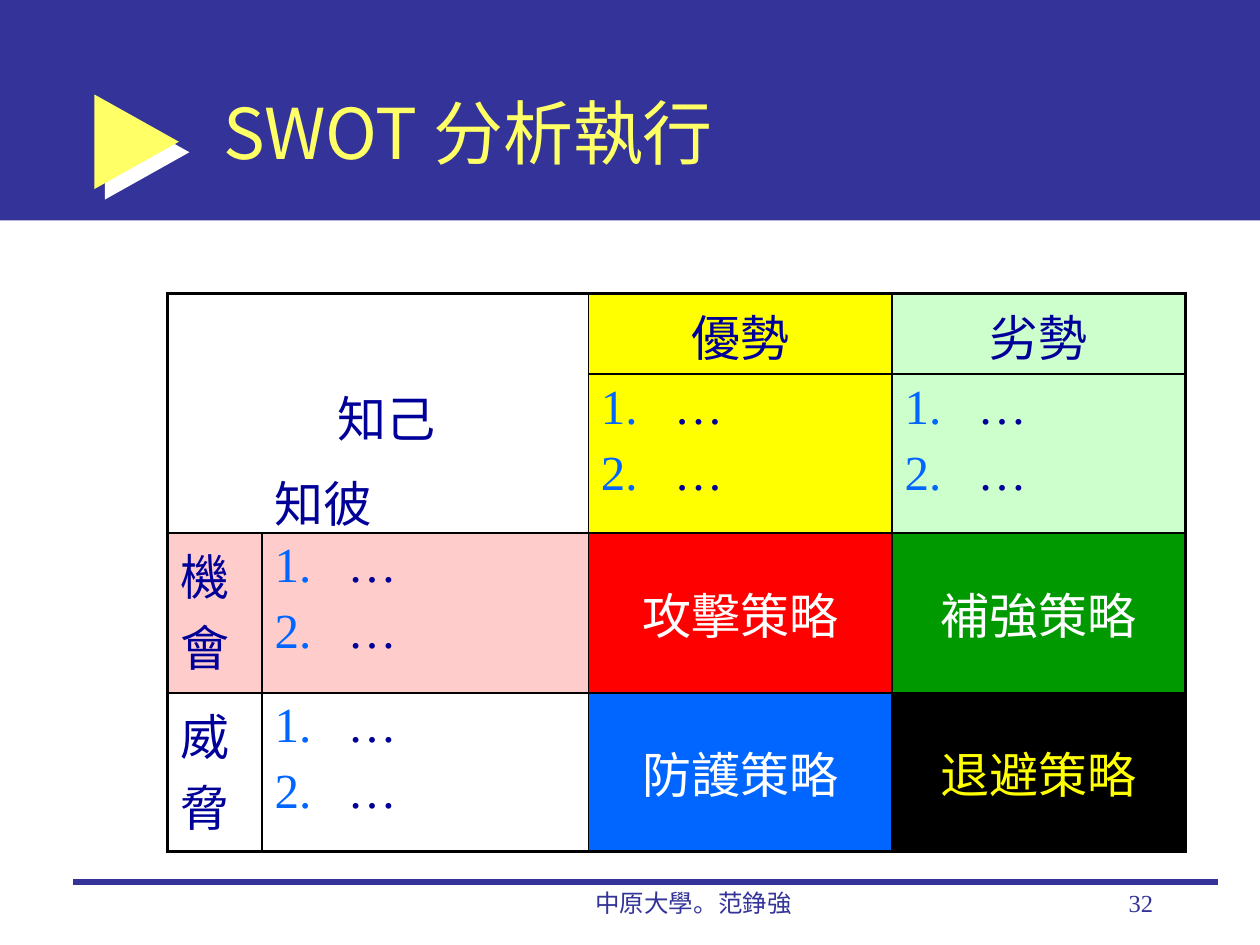
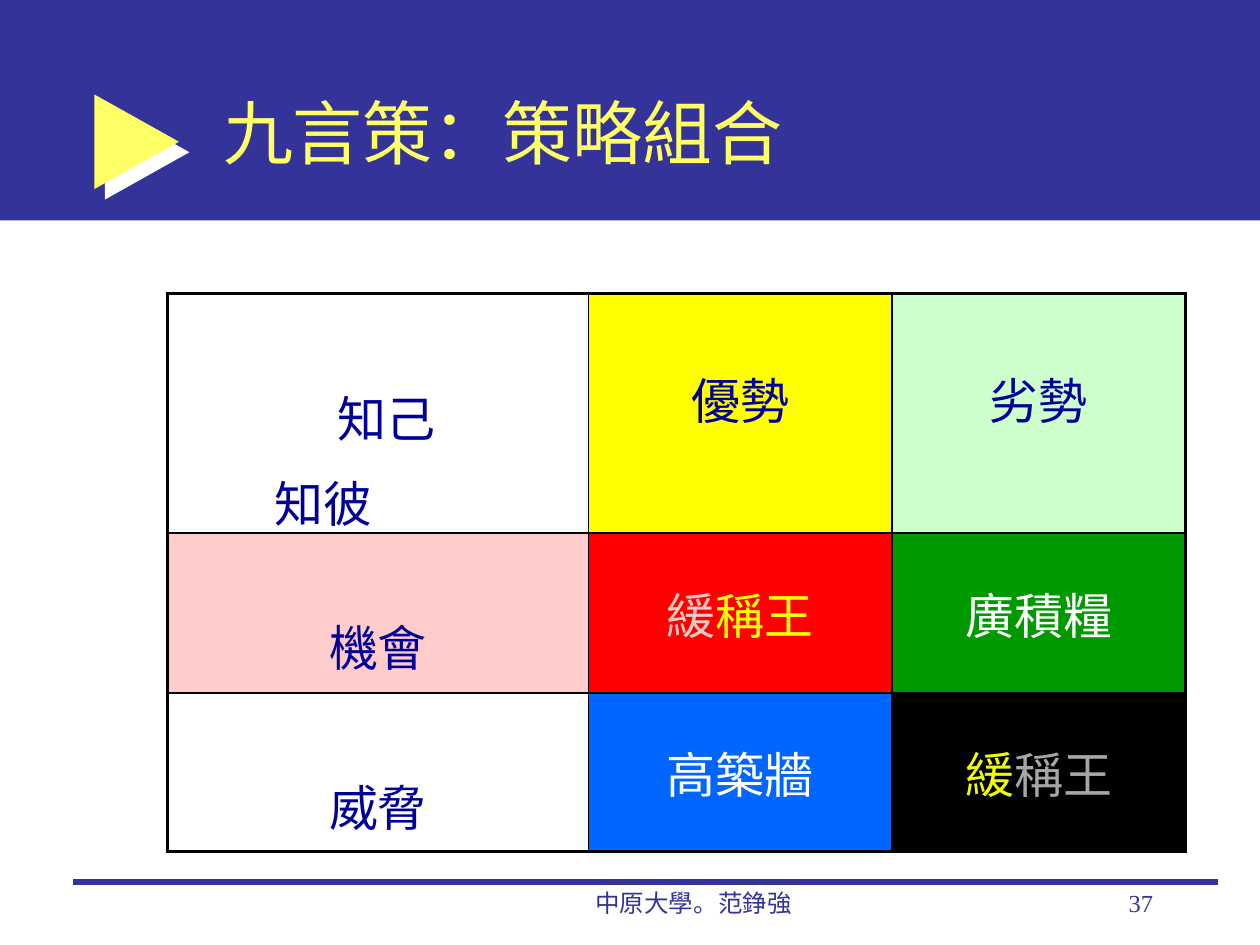
from lxml.etree import SubElement
from pptx import Presentation
from pptx.dml.color import RGBColor as Rgb
from pptx.enum.shapes import MSO_CONNECTOR as Link, MSO_SHAPE as Kind
from pptx.enum.text import MSO_ANCHOR as Anchor, PP_ALIGN as Align
from pptx.oxml import parse_xml
from pptx.oxml.ns import nsdecls, qn
from pptx.util import Inches, Pt

HUES = {
    "band": "333399", "lemon": "FFFF66", "navy": "000099", "white": "FFFFFF",
    "black": "000000", "yellow": "FFFF00", "mint": "CCFFCC", "pink": "FFCCCC",
    "red": "FF0000", "green": "009900", "blue": "0066FF", "blush": "EEC8C4",
    "lime": "F0FC04", "grey": "A6A6A6",
}
SERIF, SANS = "Times New Roman", "Noto Sans CJK SC"
COLS = [0.75, 2.59, 2.41, 2.33]
ROWS = [0.64, 1.26, 1.27, 1.26]
FILLS = [
    [None, None, "yellow", "mint"],
    [None, None, "yellow", "mint"],
    ["pink", "pink", "red", "green"],
    ["white", "white", "blue", "black"],
]
KINDS = {
    "head": ({}, {"alignment": Align.CENTER}),
    "tall": ({"vertical_anchor": Anchor.MIDDLE, "margin_bottom": Inches(0.29)},
             {"alignment": Align.CENTER}),
    "side": ({}, {}),
    "wide": ({}, {"alignment": Align.CENTER, "line_spacing": 2.0}),
    "plan": ({"vertical_anchor": Anchor.MIDDLE}, {"alignment": Align.CENTER}),
    "list": ({}, {}),
}
CORNER = ("side", [[("\t知己", "navy")], [("知彼", "navy")]])
DOTS = ("list", [[("…", "navy")], [("…", "navy")]])


def rgb(hue):
    return Rgb.from_string(HUES[hue])


def apply(item, form):
    for name, value in form.items():
        setattr(item, name, value)


def write(para, text, size, hue, face=SERIF):
    run = para.add_run()
    run.text = text
    apply(run.font, {"size": Pt(size), "name": face})
    run.font.color.rgb = rgb(hue)
    east = SubElement(run.font._element, qn("a:ea"))
    east.set("typeface", SANS)


def shape(slide, kind, box, hue):
    part = slide.shapes.add_shape(kind, *map(Inches, box))
    part.shadow.inherit = False
    part.fill.solid()
    part.fill.fore_color.rgb = rgb(hue)
    part.line.fill.background()
    return part


def label(slide, box, text, align):
    part = slide.shapes.add_textbox(*map(Inches, box))
    part.text_frame.word_wrap = True
    para = part.text_frame.paragraphs[0]
    para.alignment = align
    write(para, text, 14, "band")
    return part


def frame(slide):
    band = shape(slide, Kind.RECTANGLE, (0, 0, 10, 1.75), "band")
    arrow = shape(slide, Kind.RIGHT_ARROW, (0.75, 0.75, 0.67, 0.75), "lemon")
    arrow.adjustments[0], arrow.adjustments[1] = 0.38, 1
    glow = arrow._element.spPr.find(qn("a:effectLst"))
    glow.append(parse_xml(
        f'<a:outerShdw {nsdecls("a")} dist="{Pt(8.5)}" dir="2700000" algn="ctr" '
        f'rotWithShape="0"><a:srgbClr val="{HUES["white"]}"/></a:outerShdw>'))
    rule = slide.shapes.add_connector(
        Link.STRAIGHT, Inches(0.58), Inches(7), Inches(9.67), Inches(7))
    rule.line.width = Pt(3)
    rule.line.color.rgb = rgb("band")
    SubElement(rule._element.spPr, qn("a:effectLst"))
    foot = label(slide, (3.92, 7, 3.17, 0.5), "中原大學。范錚強", Align.CENTER)
    for part in (band, arrow, rule, foot):
        slide.slide_layout.shapes._spTree.append(part._element)


def title(slide, box, text):
    head = slide.shapes.title
    apply(head, dict(zip(("left", "top", "width", "height"), map(Inches, box))))
    head.text_frame.vertical_anchor = Anchor.MIDDLE
    para = head.text_frame.paragraphs[0]
    para.alignment = Align.LEFT
    write(para, text, 40, "lemon", SANS)


def number(para):
    props = para._p.get_or_add_pPr()
    props.set("marL", str(Inches(0.58)))
    props.set("indent", str(-Inches(0.58)))
    tint = SubElement(props, qn("a:buClr"))
    SubElement(tint, qn("a:srgbClr")).set("val", HUES["blue"])
    SubElement(props, qn("a:buAutoNum")).set("type", "arabicPeriod")


def edge(cell, row, col):
    corner = row < 2 and col < 2
    sides = {
        "lnL": (col == 0, col == 1), "lnR": (col == 3, col == 0),
        "lnT": (row == 0, row == 1), "lnB": (row == 3, row == 0),
    }
    props = cell._tc.get_or_add_tcPr()
    for spot, (tag, (outer, inner)) in enumerate(sides.items()):
        width = Pt(2.25 if outer else 1)
        paint = "<a:noFill/>" if corner and inner and not outer else (
            f'<a:solidFill><a:srgbClr val="{HUES["black"]}"/></a:solidFill>')
        props.insert(spot, parse_xml(
            f'<a:{tag} {nsdecls("a")} w="{width}">{paint}</a:{tag}>'))


def fill(cell, kind, lines):
    shell, form = KINDS[kind]
    apply(cell, shell)
    text = cell.text_frame
    for spot, runs in enumerate(lines):
        para = text.add_paragraph() if spot else text.paragraphs[0]
        apply(para, form)
        if spot:
            para.space_before = Pt(6.7 if kind == "list" else 8.1)
        if kind == "list":
            number(para)
        for word, hue in runs:
            write(para, word, 28, hue)


def matrix(slide, left, top, cells, spans):
    grid = slide.shapes.add_table(
        len(ROWS), len(COLS), Inches(left), Inches(top),
        Inches(sum(COLS)), Inches(sum(ROWS))).table
    apply(grid, {"first_row": False, "horz_banding": False})
    for col, width in zip(grid.columns, COLS):
        col.width = Inches(width)
    for row, height in zip(grid.rows, ROWS):
        row.height = Inches(height)
    for start, end in spans:
        grid.cell(*start).merge(grid.cell(*end))
    for row, hues in enumerate(FILLS):
        for col, hue in enumerate(hues):
            cell = grid.cell(row, col)
            if hue:
                cell.fill.solid()
                cell.fill.fore_color.rgb = rgb(hue)
            else:
                cell.fill.background()
            edge(cell, row, col)
    for spot, (kind, lines) in cells.items():
        fill(grid.cell(*spot), kind, lines)


def one(kind, text, hue="navy"):
    return kind, [[(text, hue)]]


SWOT = {
    (0, 2): one("head", "優勢"), (0, 3): one("head", "劣勢"),
    (1, 1): CORNER, (1, 2): DOTS, (1, 3): DOTS,
    (2, 0): one("side", "機會"), (2, 1): DOTS,
    (2, 2): one("plan", "攻擊策略", "white"),
    (2, 3): one("plan", "補強策略", "white"),
    (3, 0): one("side", "威脅"), (3, 1): DOTS,
    (3, 2): one("plan", "防護策略", "white"),
    (3, 3): one("plan", "退避策略", "yellow"),
}
NINE = {
    (0, 2): one("tall", "優勢"), (0, 3): one("tall", "劣勢"),
    (1, 1): CORNER,
    (2, 0): one("wide", "機會"),
    (2, 2): ("plan", [[("緩", "blush"), ("稱王", "yellow")]]),
    (2, 3): one("plan", "廣積糧", "white"),
    (3, 0): one("wide", "威脅"),
    (3, 2): one("plan", "高築牆", "white"),
    (3, 3): ("plan", [[("緩", "lime"), ("稱王", "grey")]]),
}
JOINS = [((0, 2), (1, 2)), ((0, 3), (1, 3)), ((2, 0), (2, 1)), ((3, 0), (3, 1))]
PAGES = [
    ("SWOT 分析執行", "32", SWOT, []),
    ("九言策：策略組合", "37", NINE, JOINS),
]


def main():
    deck = Presentation()
    deck.slide_width, deck.slide_height = Inches(10), Inches(7.5)
    layout = deck.slide_layouts[5]
    for spot, (name, page, cells, spans) in enumerate(PAGES):
        slide = deck.slides.add_slide(layout)
        if spot == 0:
            frame(slide)
        title(slide, (1.67, 0.42, 7.58, 1.25), name)
        label(slide, (7.17, 7, 2.08, 0.5), page, Align.RIGHT)
        matrix(slide, 1.33, 2.33, cells, spans)
    deck.save("out.pptx")


if __name__ == "__main__":
    main()
